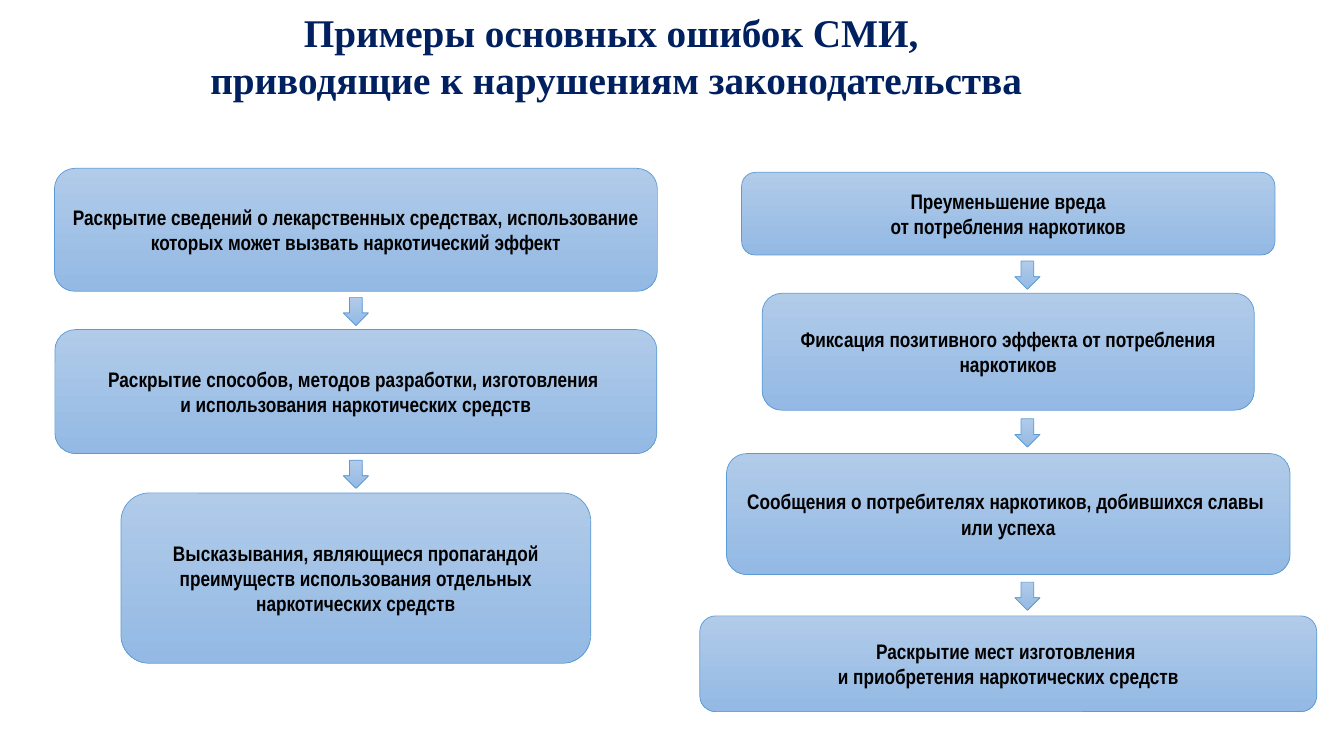
from pptx import Presentation
from pptx import util as u
from pptx.dml.color import RGBColor
from pptx.enum import shapes, text

# Content: each column is (box centre, arrow centre, boxes);
# each box is (top, width, height, wording), in inches
TITLE = ["Примеры основных ошибок СМИ, ",
         "приводящие к нарушениям законодательства"]
COLUMNS = [
    (3.53, 3.53, [
        (1.67, 5.98, 1.22, "Раскрытие сведений о лекарственных средствах, "
                           "использование которых может вызвать наркотический эффект"),
        (3.27, 5.97, 1.23, "Раскрытие способов, методов разработки, изготовления \v"
                           "и использования наркотических средств"),
        (4.89, 4.66, 1.69, "Высказывания, являющиеся пропагандой преимуществ "
                           "использования отдельных наркотических средств"),
    ]),
    (10, 10.19, [
        (1.71, 5.29, 0.82, "Преуменьшение вреда\vот потребления наркотиков"),
        (2.91, 4.88, 1.16, "Фиксация позитивного эффекта от потребления наркотиков"),
        (4.5, 5.59, 1.2, "Сообщения о потребителях наркотиков, добившихся славы \v"
                         "или успеха"),
        (6.11, 6.12, 0.95, "Раскрытие мест изготовления \v"
                           "и приобретения наркотических средств"),
    ]),
]
ARROW_WIDTH, ARROW_HEIGHT = 0.25, 0.28

NAVY = RGBColor(0x00, 0x20, 0x60)
BLACK = RGBColor(0, 0, 0)
EDGE = RGBColor(0x5B, 0x9B, 0xD5)
GRADIENT = [RGBColor(0xB1, 0xCB, 0xE9), RGBColor(0x93, 0xB9, 0xE4)]


def write(frame, lines, *, font, size, color, anchor, inset):
    frame.word_wrap = True
    frame.vertical_anchor = anchor
    frame.margin_left = frame.margin_right = u.Inches(inset)
    frame.margin_top = frame.margin_bottom = u.Inches(inset / 2)
    for index, line in enumerate(lines):
        para = frame.add_paragraph() if index else frame.paragraphs[0]
        para.text = line
        para.alignment = text.PP_ALIGN.CENTER
        for span in para.runs:
            span.font.name, span.font.size = font, u.Pt(size)
            span.font.bold = True
            span.font.color.rgb = color


def add_block(page, kind, center, top, width, height):
    block = page.shapes.add_shape(kind, u.Inches(center - width / 2), u.Inches(top),
                                  u.Inches(width), u.Inches(height))
    block.shadow.inherit = False
    block.fill.gradient()
    block.fill.gradient_angle = 270
    for stop, color in zip(block.fill.gradient_stops, GRADIENT):
        stop.color.rgb = color
    for stop, position in zip(block.fill.gradient_stops, (0, 1)):
        stop.position = position
    block.line.color.rgb = EDGE
    block.line.width = u.Pt(0.5)
    return block


deck = Presentation()
deck.slide_width, deck.slide_height = u.Inches(13.33), u.Inches(7.5)
page = deck.slides.add_slide(deck.slide_layouts[6])

# Chains of boxes, with an arrow in the middle of each gap
for center, arrow_center, boxes in COLUMNS:
    for top, width, height, wording in boxes:
        box = add_block(page, shapes.MSO_SHAPE.ROUNDED_RECTANGLE,
                        center, top, width, height)
        write(box.text_frame, [wording], font="Arial Narrow", size=15, color=BLACK,
              anchor=text.MSO_ANCHOR.MIDDLE, inset=0.07)
    for (top, _, height, _), (next_top, *_) in zip(boxes, boxes[1:]):
        arrow_top = (top + height + next_top - ARROW_HEIGHT) / 2 + 0.01
        add_block(page, shapes.MSO_SHAPE.DOWN_ARROW, arrow_center, arrow_top,
                  ARROW_WIDTH, ARROW_HEIGHT)

# Title
title = page.shapes.add_textbox(u.Inches(0.14), u.Inches(0.03),
                                u.Inches(11.94), u.Inches(1.04))
write(title.text_frame, TITLE, font="Times New Roman", size=28, color=NAVY,
      anchor=text.MSO_ANCHOR.TOP, inset=0.1)

deck.save("out.pptx")
